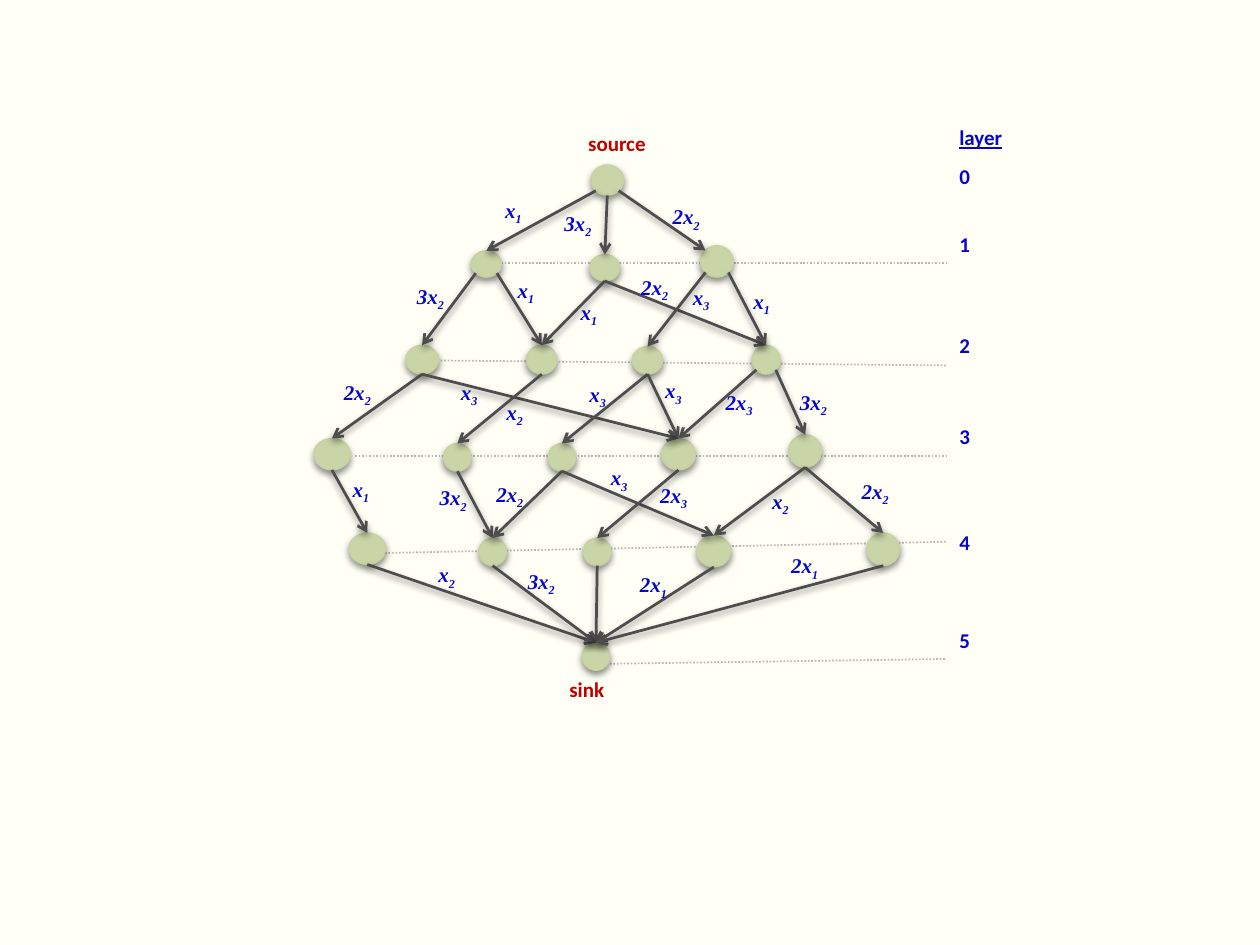
from lxml import etree
from pptx import Presentation
from pptx import util as u
from pptx.dml import color
from pptx.enum import dml, shapes, text
from pptx.oxml import ns

HUES = {"back": "FFFFF6", "node": "C9D5A7", "rim": "C6D2A1", "edge": "4D4D4D",
        "rule": "B8B8B8", "ends": "C00000", "ink": "0606C8", "shade": "000000"}
UNIT = 2.54
TERM = {"name": "Times New Roman", "italic": True}
NODES = {
    "s": (2.69, 0.31, 0.26, 0.24),
    "a": (1.74, 0.99, 0.24, 0.21), "b": (2.68, 1.02, 0.24, 0.21),
    "c": (3.56, 0.95, 0.26, 0.25),
    "d": (1.22, 1.74, 0.26, 0.23), "e": (2.18, 1.74, 0.24, 0.23),
    "f": (3.02, 1.75, 0.24, 0.22), "g": (3.97, 1.74, 0.22, 0.23),
    "h": (0.49, 2.48, 0.29, 0.25), "i": (1.52, 2.52, 0.22, 0.22),
    "j": (2.35, 2.52, 0.22, 0.22), "k": (3.25, 2.48, 0.27, 0.25),
    "l": (4.26, 2.45, 0.26, 0.26),
    "m": (0.77, 3.23, 0.29, 0.25), "n": (1.8, 3.27, 0.22, 0.22),
    "o": (2.63, 3.27, 0.22, 0.22), "p": (3.53, 3.25, 0.27, 0.25),
    "q": (4.88, 3.23, 0.26, 0.26),
    "t": (2.62, 4.1, 0.22, 0.22)}
EDGES = [
    ("sa", -1, "x1", 1.91, 0.52), ("sb", 0, "3x2", 2.38, 0.62),
    ("sc", 1, "2x2", 3.24, 0.57),
    ("ad", -1, "3x2", 1.21, 1.2), ("ae", 1, "x1", 2.01, 1.15),
    ("be", 0, "x1", 2.51, 1.33), ("bg", 0, "2x2", 2.99, 1.13),
    ("cf", -1, "x3", 3.4, 1.21), ("cg", 1, "x1", 3.88, 1.24),
    ("dh", 0, "2x2", 0.63, 1.96), ("dk", 0, "x3", 1.56, 1.96),
    ("ei", 0, "x2", 1.92, 2.12), ("fj", 0, "x3", 2.58, 1.98),
    ("fk", 0, "x3", 3.18, 1.95), ("gk", -1, "2x3", 3.66, 2.04),
    ("gl", 1, "3x2", 4.25, 2.04),
    ("hm", 0, "x1", 0.7, 2.73), ("in", 0, "3x2", 1.39, 2.8),
    ("jn", 0, "2x2", 1.84, 2.77), ("jp", 0, "x3", 2.75, 2.64),
    ("ko", 0, "2x3", 3.14, 2.78), ("lp", 0, "x2", 4.03, 2.83),
    ("lq", 0, "2x2", 4.74, 2.75),
    ("mt", 0, "x2", 1.38, 3.41), ("nt", 0, "3x2", 2.09, 3.46),
    ("ot", 0, "", 0, 0), ("pt", 0, "2x1", 2.98, 3.49),
    ("qt", 0, "2x1", 4.18, 3.34)]
RULES = [(1.95, 1.09, 1.09), (1.36, 1.86, 1.9), (0.82, 2.62, 2.62),
         (1, 3.39, 3.3), (2.73, 4.27, 4.23)]
MARKS = [("layer", 0), ("0", 0.31), ("1", 0.85), ("2", 1.65),
         ("3", 2.37), ("4", 3.21), ("5", 3.99)]


def hue(key):
    """Return the named colour."""
    return color.RGBColor.from_string(HUES[key])


def put(box, x, y):
    """Turn grid units within a box into slide lengths."""
    left, top = box
    return u.Cm(left + x * UNIT), u.Cm(top + y * UNIT)


def shade(item):
    """Give a shape or line its soft drop shadow."""
    fx = etree.SubElement(item._element.spPr, ns.qn("a:effectLst"))
    drop = etree.SubElement(fx, ns.qn("a:outerShdw"), blurRad="50800",
                            dist="25400", dir="5400000", rotWithShape="0")
    tint = etree.SubElement(drop, ns.qn("a:srgbClr"), val=HUES["shade"])
    etree.SubElement(tint, ns.qn("a:alpha"), val="45000")


def label(slide, box, spot, words, key, wide=0.86, sub="", **form):
    """Write a bold label with an optional subscript."""
    size = u.Cm(wide * UNIT), u.Cm(0.3 * UNIT)
    frame = slide.shapes.add_textbox(*put(box, *spot), *size).text_frame
    frame.word_wrap = True
    frame.auto_size = text.MSO_AUTO_SIZE.SHAPE_TO_FIT_TEXT
    style = {"name": "Calibri", "size": u.Pt(12), "bold": True, **form}
    for part in filter(None, (words, sub)):
        run = frame.paragraphs[0].add_run()
        run.text = part
        for name, value in style.items():
            setattr(run.font, name, value)
        run.font.color.rgb = hue(key)
        if part is sub:
            run._r.get_or_add_rPr().set("baseline", "-25000")


def stroke(slide, box, start, end, key, width):
    """Draw a straight line between two grid points."""
    line = slide.shapes.add_connector(
        shapes.MSO_CONNECTOR.STRAIGHT, *put(box, *start), *put(box, *end))
    line.line.color.rgb = hue(key)
    line.line.width = u.Pt(width)
    return line


def rule(slide, box, x, y, end):
    """Draw the dotted line that marks a layer."""
    line = stroke(slide, box, (x, y), (5.51, end), "rule", 1)
    line.line.dash_style = dml.MSO_LINE.ROUND_DOT
    etree.SubElement(line._element.spPr, ns.qn("a:effectLst"))


def node(slide, box, x, y, wide, high):
    """Draw one round node."""
    dot = slide.shapes.add_shape(
        shapes.MSO_SHAPE.OVAL, *put(box, x, y),
        u.Cm(wide * UNIT), u.Cm(high * UNIT))
    dot.fill.solid()
    dot.fill.fore_color.rgb = hue("node")
    dot.line.color.rgb = hue("rim")
    dot.line.width = u.Pt(0.75)
    shade(dot)
    return dot


def rim(name, side, low):
    """Find the left, middle or right point on a node's low or high rim."""
    x, y, wide, high = NODES[name]
    drop = 0.85 if side else 1
    return x + wide * (0.5 + 0.35 * side), y + high * (drop if low else 1 - drop)


def arrow(slide, box, dots, pair, side):
    """Link a node to one in the next layer."""
    head, tail = pair
    skew = -1 if pair == "sc" else 0
    link = stroke(slide, box, rim(head, side, True), rim(tail, skew, False),
                  "edge", 1.57)
    if not skew:
        link.end_connect(dots[tail], 0)
    etree.SubElement(link.line._get_or_add_ln(), ns.qn("a:tailEnd"), type="arrow")
    shade(link)


def graph(slide, box):
    """Draw the layered graph from source to sink."""
    for row in RULES:
        rule(slide, box, *row)
    dots = {name: node(slide, box, *area) for name, area in NODES.items()}
    for pair, side, term, x, y in EDGES:
        arrow(slide, box, dots, pair, side)
        if term:
            label(slide, box, (x, y), term[:-1], "ink", 0.45, term[-1], **TERM)
    label(slide, box, (2.57, -0.01), "source", "ends")
    label(slide, box, (2.42, 4.32), "sink", "ends")


def scale(slide, box):
    """List the layer numbers under their heading."""
    for words, y in MARKS:
        label(slide, box, (0, y), words, "ink", underline=words == "layer")


def main():
    """Build and save the slide."""
    deck = Presentation()
    deck.slide_width, deck.slide_height = u.Cm(25.4), u.Cm(19.05)
    slide = deck.slides.add_slide(deck.slide_layouts[6])
    slide.background.fill.solid()
    slide.background.fill.fore_color.rgb = hue("back")
    graph(slide, (5.08, 2.54))
    scale(slide, (19.09, 2.39))
    deck.save("out.pptx")


if __name__ == "__main__":
    main()
